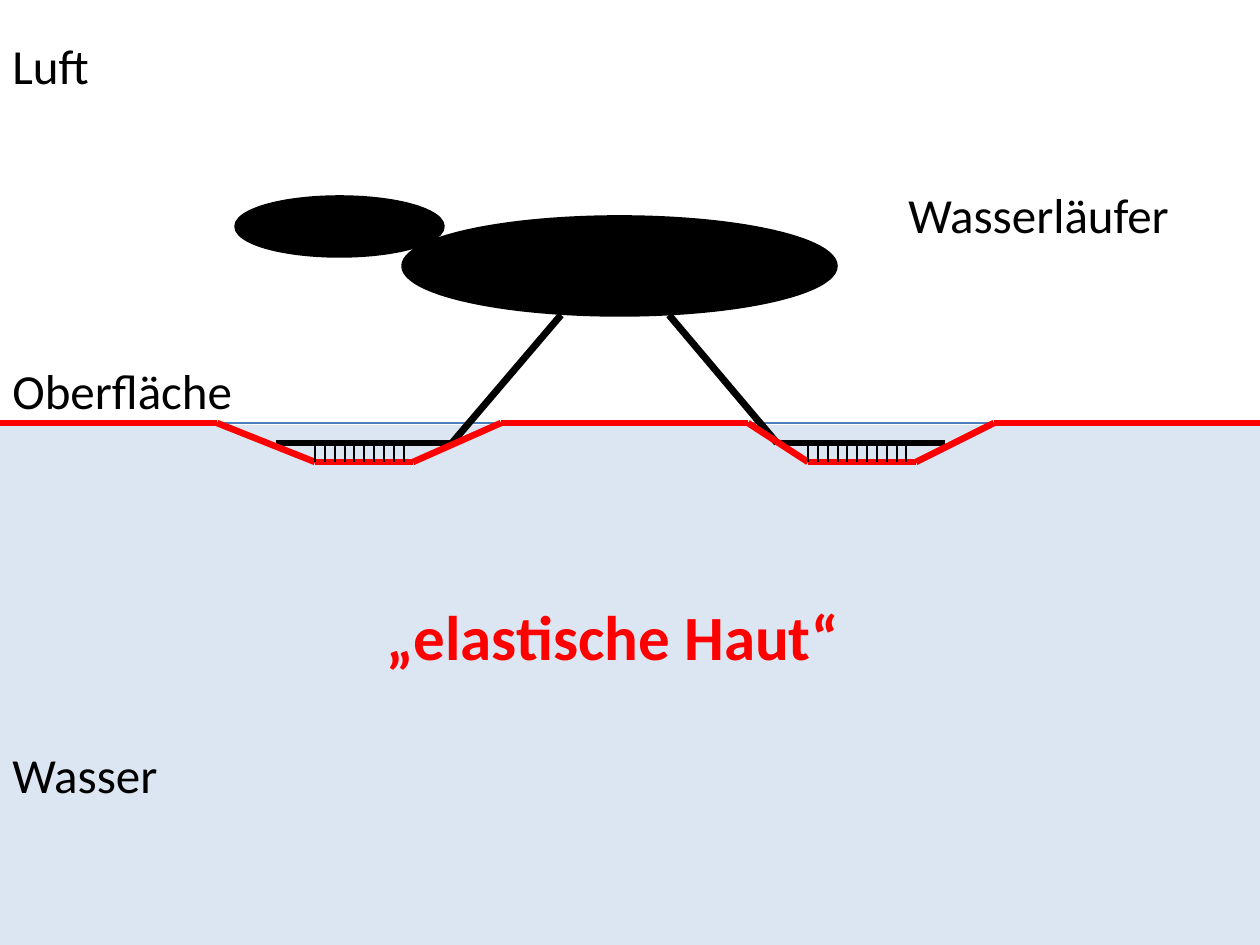
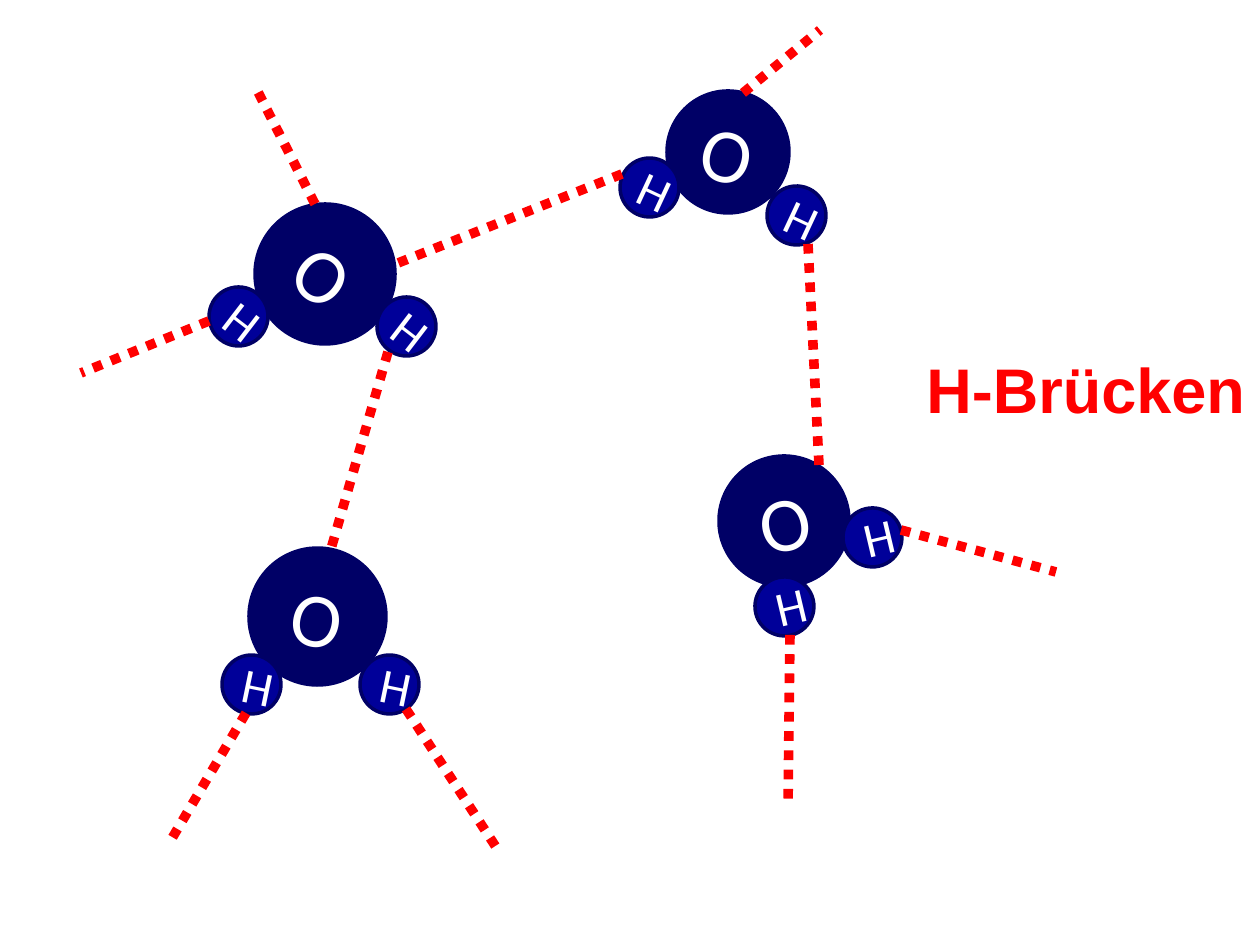
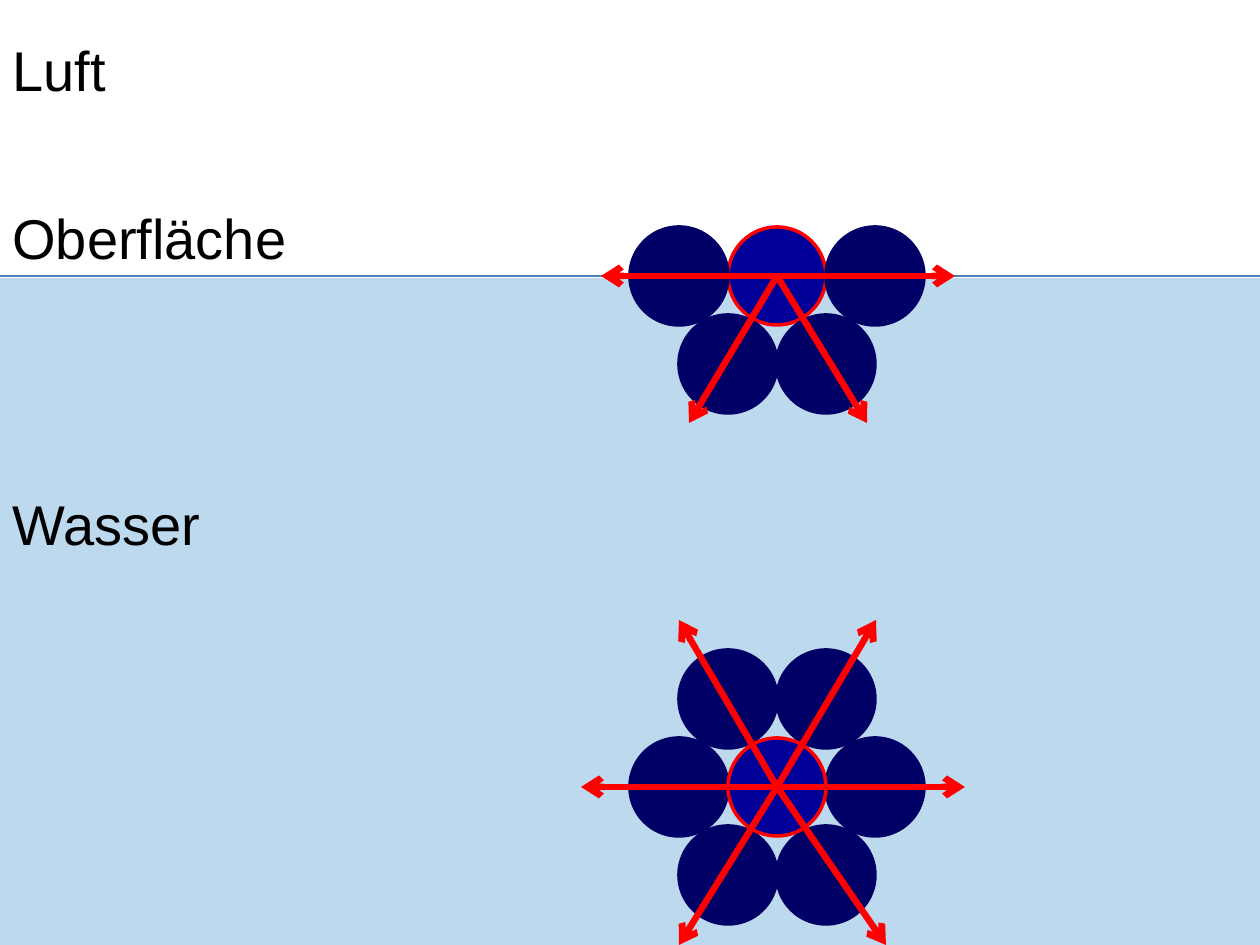
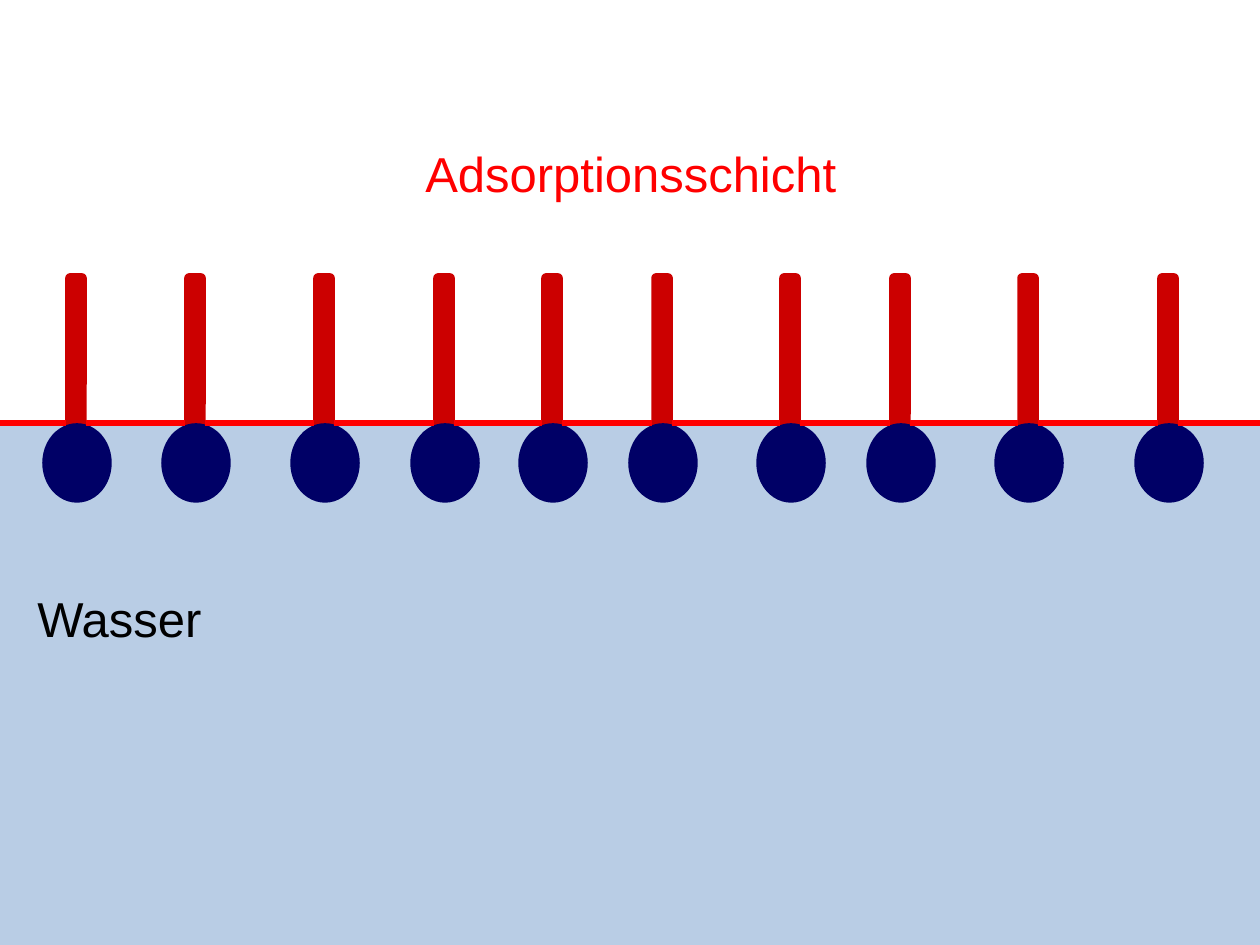
from lxml.etree import SubElement
from pptx import Presentation
from pptx.dml.color import RGBColor
from pptx.enum.dml import MSO_LINE
from pptx.enum.shapes import MSO_CONNECTOR, MSO_SHAPE
from pptx.enum.text import MSO_ANCHOR, MSO_AUTO_SIZE, PP_ALIGN
from pptx.oxml.ns import qn
from pptx.util import Pt

RECT, OVAL, ROD = MSO_SHAPE.RECTANGLE, MSO_SHAPE.OVAL, MSO_SHAPE.ROUNDED_RECTANGLE
STRAIGHT = MSO_CONNECTOR.STRAIGHT
DOTTED = MSO_LINE.ROUND_DOT
LEFT, CENTER = PP_ALIGN.LEFT, PP_ALIGN.CENTER
MIDDLE = MSO_ANCHOR.MIDDLE
GROW = MSO_AUTO_SIZE.SHAPE_TO_FIT_TEXT

PX = 914400 / 126
W, H = 1260, 945
BLACK = RGBColor(0x00, 0x00, 0x00)
WHITE = RGBColor(0xFF, 0xFF, 0xFF)
RED = RGBColor(0xFF, 0x00, 0x00)
DARK_RED = RGBColor(0xCC, 0x00, 0x00)
NAVY = RGBColor(0x00, 0x00, 0x66)
BLUE = RGBColor(0x00, 0x00, 0x99)
SURFACE_BLUE = RGBColor(0x4B, 0x7E, 0xBC)
PALE_WATER = RGBColor(0xDC, 0xE6, 0xF2)
STRONG_WATER = RGBColor(0x00, 0x70, 0xC0)
MID_WATER = RGBColor(0xB9, 0xCD, 0xE5)


def draw(s, x, y, w, h, text="", kind=None, fill=None, line=None, rotation=0,
         size=28, font="Calibri", color=BLACK, bold=False, align=LEFT, wrap=False):
    """Add a preset shape, or a text box if no kind is given, to a slide or group."""
    box = [round(v * PX) for v in (x, y, w, h)]
    if kind is None:
        sp = s.shapes.add_textbox(*box)
        sp.text_frame.word_wrap = wrap
        sp.text_frame.auto_size = GROW
    else:
        sp = s.shapes.add_shape(kind, *box)
        sp.shadow.inherit = False
        sp.fill.solid()
        sp.fill.fore_color.rgb = fill
        sp.line.color.rgb = line or fill
        sp.line.width = Pt(2)
        sp.rotation = rotation
        sp.text_frame.vertical_anchor = MIDDLE
    if text:
        p = sp.text_frame.paragraphs[0]
        p.alignment = align
        r = p.add_run()
        r.text = text
        r.font.size = Pt(size)
        r.font.name = font
        r.font.bold = bold
        r.font.color.rgb = color


def connect(s, start, end, color, width, dash=None, arrow=False):
    c = s.shapes.add_connector(STRAIGHT, *[round(v * PX) for v in (*start, *end)])
    c.line.color.rgb = color
    c.line.width = Pt(width)
    if dash:
        c.line.dash_style = dash
    sp_pr = c._element.spPr
    if arrow:
        SubElement(sp_pr.find(qn("a:ln")), qn("a:tailEnd"), type="arrow")
    SubElement(sp_pr, qn("a:effectLst"))


prs = Presentation()
prs.slide_width, prs.slide_height = round(W * PX), round(H * PX)

# Backgrounds, with air above the water surface where there is one
slides = []
for background, surface in [(PALE_WATER, 423), (WHITE, None),
                            (STRONG_WATER, 276), (MID_WATER, 423)]:
    s = prs.slides.add_slide(prs.slide_layouts[6])
    s.background.fill.solid()
    s.background.fill.fore_color.rgb = background
    if surface:
        draw(s, 0, 0, W, surface, kind=RECT, fill=WHITE)
        connect(s, (0, surface), (W, surface), SURFACE_BLUE, 0.75)
    slides.append(s)
strider, bridges, forces, layer = slides
water = forces.background.fill._xPr.find(".//" + qn("a:srgbClr"))
SubElement(water, qn("a:alpha"), val="26000")

# Slide 1: water strider on the elastic skin
s = strider
draw(s, 403, 217, 433, 98, kind=OVAL, fill=BLACK)
draw(s, 236, 197, 207, 59, kind=OVAL, fill=BLACK)
for hip, ankle, toe in [(669, 777, 945), (561, 452, 276)]:
    connect(s, (hip, 315), (ankle, 443), BLACK, 4)
    connect(s, (ankle, 443), (toe, 443), BLACK, 3.5)

skin = [(0, 423), (217, 423), (315, 462), (413, 462), (501, 423), (748, 423),
        (808, 462), (916, 462), (994, 423), (W, 423)]
for start, end in zip(skin, skin[1:]):
    connect(s, start, end, RED, 3.75)

for first, count in [(315, 10), (808, 11)]:
    for i in range(count):
        hair = first + round(i * 9.84)
        connect(s, (hair, 443), (hair, 462), BLACK, 1.5)

draw(s, 374, 591, 650, 89, "„elastische Haut“", size=36, color=RED, bold=True, wrap=True)
draw(s, 896, 178, 364, 72, "Wasserläufer", wrap=True)
draw(s, 0, 354, 247, 72, "Oberfläche")
draw(s, 0, 738, 171, 72, "Wasser")
draw(s, 0, 29, 103, 72, "Luft")

# Slide 2: water molecules and hydrogen bonds
s = bridges
# oxygen x, y, diameter, rotation; hydrogen rotation and corners
molecules = [
    (255, 204, 140, 37.6, 37.6, [(377, 297), (209, 287)]),
    (667, 91, 122, 14.8, 25.1, [(767, 186), (620, 158)]),
    (719, 456, 130, 346.7, 346.7, [(843, 508), (755, 577)]),
    (249, 548, 137, 11.7, 11.7, [(360, 655), (222, 655)]),
]
for x, y, d, o_turn, h_turn, hydrogens in molecules:
    draw(s, x, y, d, d, "O", kind=OVAL, fill=NAVY, rotation=o_turn,
         size=44, color=WHITE, align=CENTER)
    for hx, hy in hydrogens:
        draw(s, hx, hy, 59, 59, "H", kind=OVAL, fill=BLUE, line=NAVY,
             rotation=h_turn, color=WHITE, align=CENTER)

bonds = [
    ((388, 352), (331, 549)), ((808, 244), (819, 465)), ((622, 174), (393, 265)),
    ((790, 635), (788, 808)), ((901, 530), (1056, 572)), ((246, 713), (171, 840)),
    ((406, 709), (496, 847)), ((209, 321), (81, 373)), ((743, 93), (820, 30)),
    ((315, 204), (256, 88)),
]
for start, end in bonds:
    connect(s, start, end, RED, 5.5, dash=DOTTED)
draw(s, 914, 344, 346, 89, "H-Brücken", size=36, font="Arial", color=RED, bold=True)

# Slide 3: forces on a molecule inside the water and at the surface
s = forces
draw(s, 0, 29, 120, 81, "Luft", size=32, font="Arial")
draw(s, 0, 483, 354, 81, "Wasser", size=32, font="Arial", wrap=True)
draw(s, 0, 197, 301, 81, "Oberfläche", size=32, font="Arial")

D, ROW = 98, 88
CX = 777
centre = [(0, 0)]
beside = [(-D, 0), (D, 0)]
above = [(-D / 2, -ROW), (D / 2, -ROW)]
below = [(-D / 2, ROW), (D / 2, ROW)]
clusters = [
    (787, above + below + beside + centre,
     [(965, 787), (886, 945), (679, 945), (581, 787), (679, 620), (876, 620)]),
    (276, centre + beside + below,
     [(955, 276), (867, 423), (689, 423), (601, 276)]),
]
for cy, offsets, tips in clusters:
    for dx, dy in offsets:
        fill, line = (BLUE, RED) if (dx, dy) == (0, 0) else (NAVY, NAVY)
        draw(s, CX + dx - D / 2, cy + dy - D / 2, D, D, kind=OVAL, fill=fill, line=line)
    for tip in tips:
        connect(s, (CX, cy), tip, RED, 3.75, arrow=True)

# Slide 4: surfactants in the adsorption layer
s = layer
rods = [76, 195, 324, 444, 552, 662, 790, 900, 1028, 1168]
for x in rods:
    surfactant = s.shapes.add_group_shape()
    draw(surfactant, x - 77, 343, 154, 18, kind=ROD, fill=DARK_RED, rotation=90)
    draw(surfactant, x + 1 - 38, 430, 76, 66, kind=OVAL, fill=NAVY, rotation=90)

draw(s, 413, 137, 441, 72, "Adsorptionsschicht", font="Arial", color=RED)
GAP = 10
starts = [0] + [x + GAP for x in rods]
ends = [x - GAP for x in rods] + [W]
for left, right in zip(starts, ends):
    connect(s, (left, 423), (right, 423), RED, 3)
draw(s, 25, 582, 191, 72, "Wasser", font="Arial")

prs.save("out.pptx")
